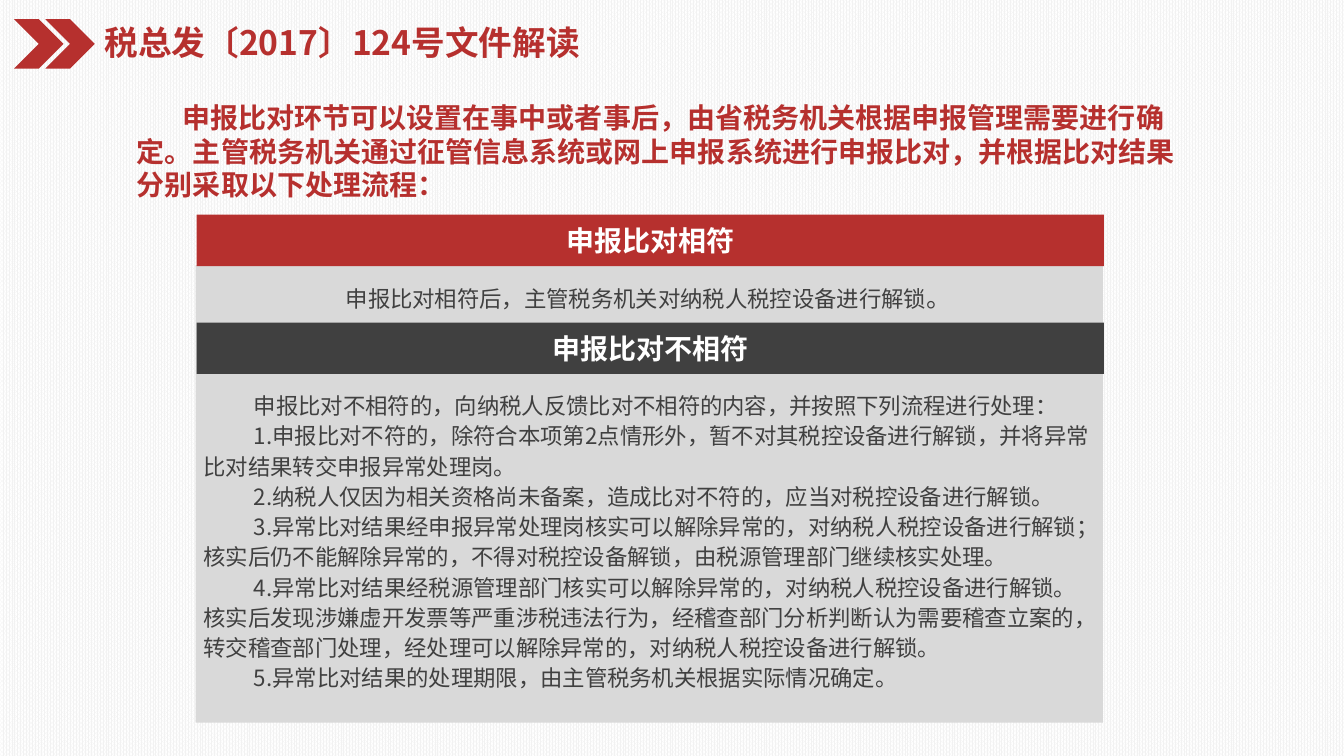
from dataclasses import dataclass

from pptx import Presentation
from pptx.dml.color import RGBColor as RGB
from pptx.enum.dml import MSO_PATTERN as Pat
from pptx.enum.shapes import MSO_SHAPE as Kind
from pptx.enum.text import MSO_ANCHOR as Anchor, PP_ALIGN as Align
from pptx.oxml import parse_xml
from pptx.oxml.ns import nsdecls
from pptx.util import Inches, Pt


@dataclass(frozen=True)
class Theme:
    font: str = "Noto Sans CJK SC"
    red: str = "B6302E"
    dark: str = "404040"
    gray: str = "D9D9D9"
    pale: str = "F2F2F2"
    white: str = "FFFFFF"
    title: int = 24
    head: int = 20
    stop: int = 18
    body: int = 16


@dataclass(frozen=True)
class Box:
    left: float
    top: float
    width: float
    height: float

    def size(self) -> list:
        return [Inches(v) for v in (self.left, self.top, self.width, self.height)]


@dataclass(frozen=True)
class Block:
    kind: Kind
    box: Box
    color: str
    label: str = ""


look = Theme()


def add_run(para, text: str, size: int, color: str, bold: bool) -> None:
    run = para.add_run()
    run.text = text
    font = run.font
    font.name, font.size, font.bold = look.font, Pt(size), bold
    font.color.rgb = RGB.from_string(color)
    # East Asian text takes its own typeface
    font._element.append(parse_xml(f'<a:ea {nsdecls("a")} typeface="{look.font}"/>'))


def write(frame, *lines: str, size: int = look.body, color: str = look.dark,
          bold: bool = False, align: Align = Align.LEFT, indent: float = 0,
          pitch: float = 0, anchor: Anchor = Anchor.TOP):
    """Fill a text frame, one paragraph for each line."""
    frame.word_wrap = True
    frame.vertical_anchor = anchor
    for i, line in enumerate(lines):
        para = frame.add_paragraph() if i else frame.paragraphs[0]
        para.alignment = align
        if pitch:
            para.line_spacing = Pt(pitch)
        if indent:
            para._p.get_or_add_pPr().set("indent", str(Inches(indent)))
        add_run(para, line, size, color, bold)
    return para


def draw(slide, block: Block) -> None:
    shape = slide.shapes.add_shape(block.kind, *block.box.size())
    shape.shadow.inherit = False
    shape.fill.solid()
    shape.fill.fore_color.rgb = RGB.from_string(block.color)
    shape.line.fill.background()
    if block.label:
        write(shape.text_frame, block.label, size=look.head, color=look.white,
              bold=True, align=Align.CENTER, anchor=Anchor.MIDDLE)


def frame_at(slide, box: Box):
    return slide.shapes.add_textbox(*box.size()).text_frame


BLOCKS = [
    Block(Kind.CHEVRON, Box(0.14, 0.19, 0.49, 0.49), look.red),
    Block(Kind.CHEVRON, Box(0.45, 0.19, 0.49, 0.49), look.red),
    Block(Kind.RECTANGLE, Box(1.94, 2.63, 9, 4.54), look.gray),
    Block(Kind.RECTANGLE, Box(1.95, 2.13, 9, 0.51), look.red, "申报比对相符"),
    Block(Kind.RECTANGLE, Box(1.95, 3.2, 9, 0.51), look.dark, "申报比对不相符"),
]

STEPS = [
    "申报比对不相符的，向纳税人反馈比对不相符的内容，并按照下列流程进行处理：",
    "1.申报比对不符的，除符合本项第2点情形外，暂不对其税控设备进行解锁，并将异常比对结果转交申报异常处理岗。",
    "2.纳税人仅因为相关资格尚未备案，造成比对不符的，应当对税控设备进行解锁。",
    "3.异常比对结果经申报异常处理岗核实可以解除异常的，对纳税人税控设备进行解锁；"
    "核实后仍不能解除异常的，不得对税控设备解锁，由税源管理部门继续核实处理。",
    "4.异常比对结果经税源管理部门核实可以解除异常的，对纳税人税控设备进行解锁。"
    "核实后发现涉嫌虚开发票等严重涉税违法行为，经稽查部门分析判断认为需要稽查立案的，"
    "转交稽查部门处理，经处理可以解除异常的，对纳税人税控设备进行解锁。",
    "5.异常比对结果的处理期限，由主管税务机关根据实际情况确定。",
]


def main() -> None:
    deck = Presentation()
    deck.slide_width, deck.slide_height = Inches(13.33), Inches(7.5)
    slide = deck.slides.add_slide(deck.slide_layouts[6])

    # Dotted background
    fill = slide.background.fill
    fill.patterned()
    fill.pattern = Pat.PERCENT_80
    fill.fore_color.rgb = RGB.from_string(look.pale)
    fill.back_color.rgb = RGB.from_string(look.white)

    # Chevrons, panel and header bars
    for block in BLOCKS:
        draw(slide, block)

    # Title and introduction
    write(frame_at(slide, Box(0.94, 0.17, 5.02, 0.51)),
          "税总发〔2017〕124号文件解读", size=look.title, color=look.red, bold=True)
    write(frame_at(slide, Box(1.26, 0.95, 10.6, 1.11)),
          "申报比对环节可以设置在事中或者事后，由省税务机关根据申报管理需要进行确定。"
          "主管税务机关通过征管信息系统或网上申报系统进行申报比对，"
          "并根据比对结果分别采取以下处理流程：",
          size=look.head, color=look.red, bold=True, indent=0.45)

    # Matching case, with a larger full stop
    para = write(frame_at(slide, Box(1.94, 2.75, 8.99, 0.45)),
                 "申报比对相符后，主管税务机关对纳税人税控设备进行解锁", align=Align.CENTER)
    add_run(para, "。", look.stop, look.dark, False)

    # Mismatch case
    write(frame_at(slide, Box(1.92, 3.81, 9.01, 3.17)), *STEPS,
          indent=0.5, pitch=21.6)

    deck.save("out.pptx")


if __name__ == "__main__":
    main()
